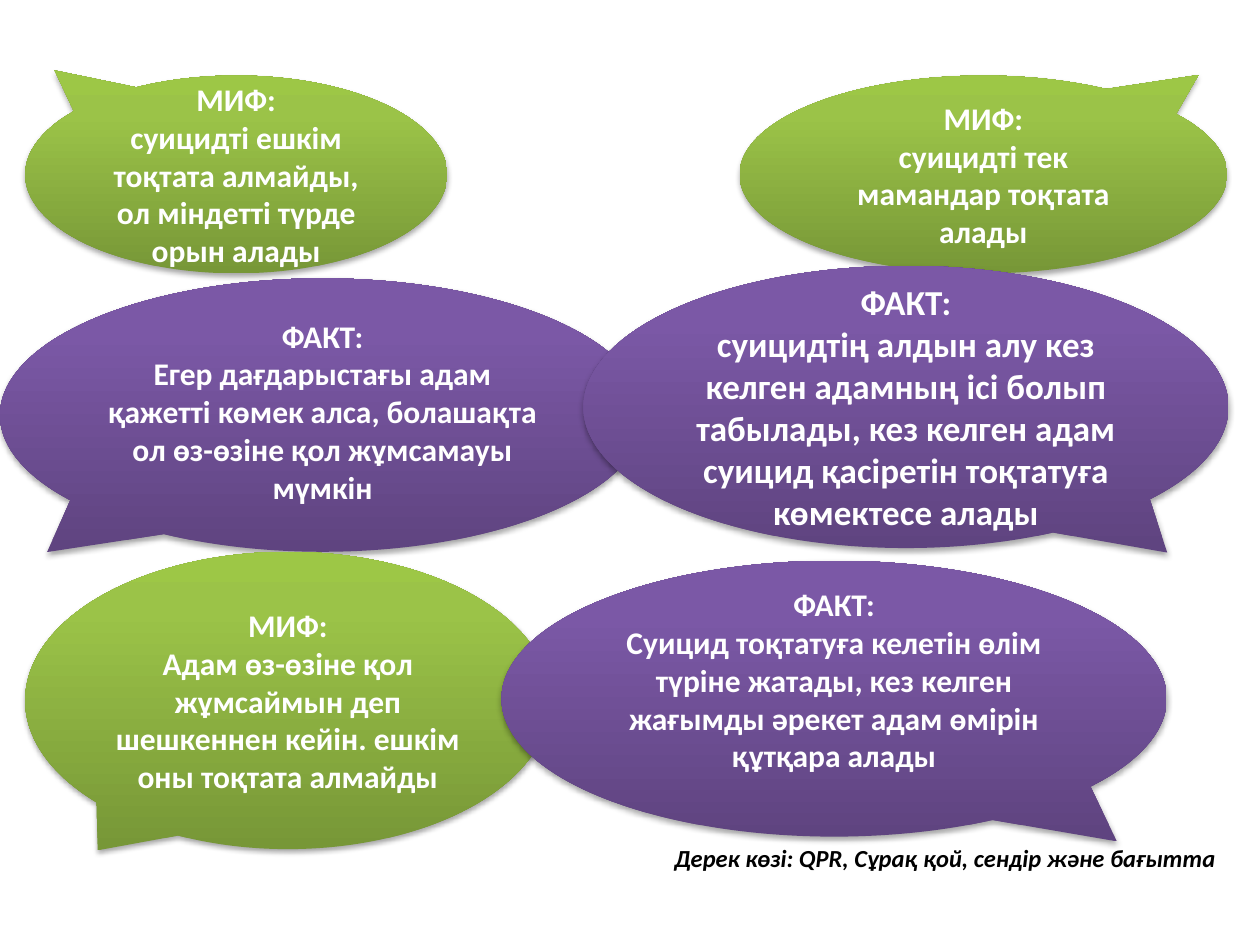
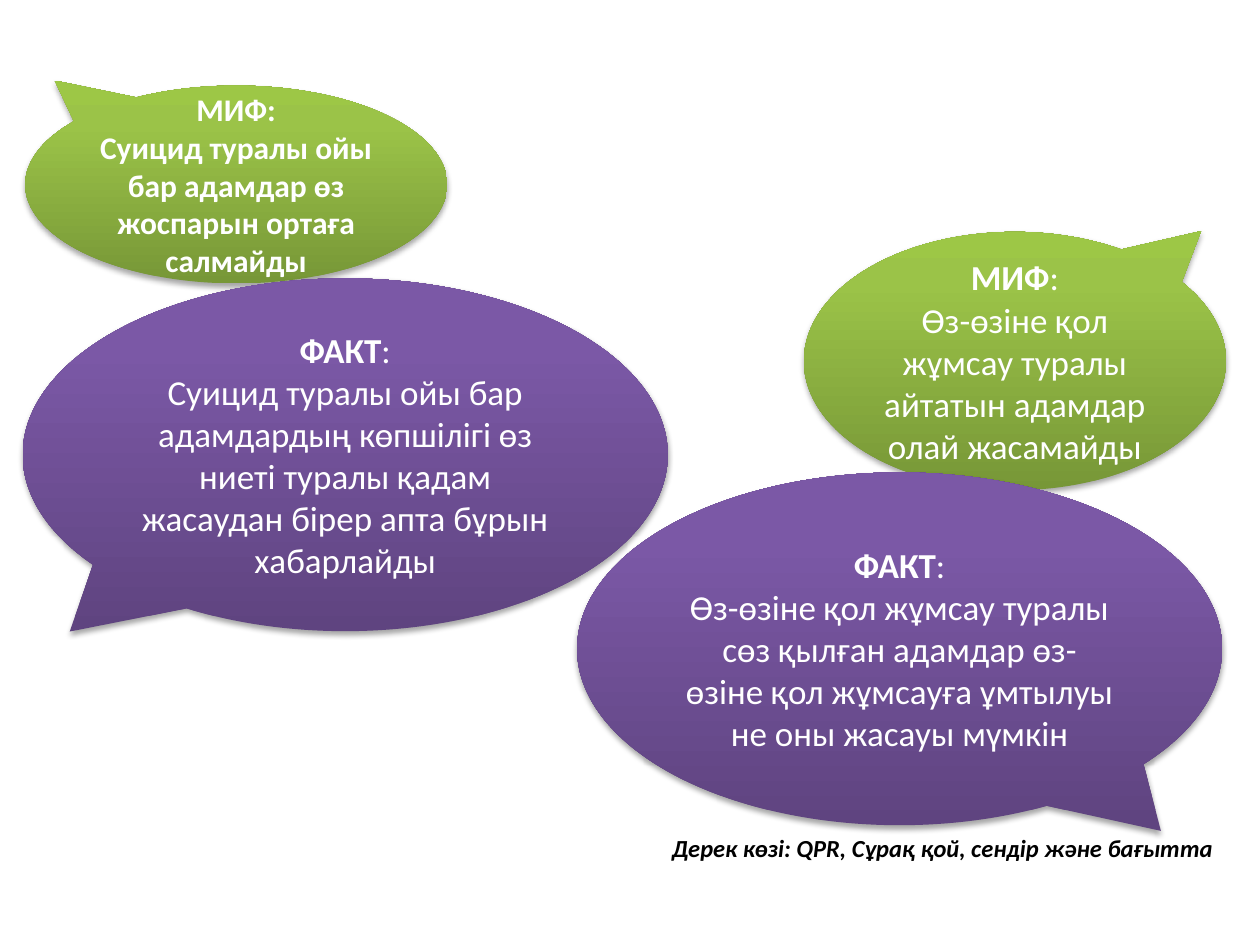
import copy

import pptx
import pptx.dml.color
import pptx.enum.shapes
import pptx.enum.text
import pptx.oxml
import pptx.oxml.ns
import pptx.util
from pptx.util import Inches

FONT = "Calibri"
WHITE = "FFFFFF"
BLACK = "000000"
MYTH = {"label": "МИФ", "gradient": [(0, "779737"), (0.8, "9BC348"), (1, "9DC746")]}
FACT = {"label": "ФАКТ", "gradient": [(0, "5F4480"), (0.8, "7B58A6"), (1, "7C57A8")]}

TAIL_TOP_LEFT = (-0.43, -0.526)
TAIL_TOP_RIGHT = (0.441, -0.503)
TAIL_BOTTOM_LEFT = (-0.427, 0.501)
TAIL_BOTTOM_RIGHT = (0.405, 0.516)

SOURCE = "Дерек көзі: QPR, Сұрақ қой, сендір және бағытта"
SHADOW = (
    '<a:outerShdw %s blurRad="40000" dist="23000" dir="5400000" rotWithShape="0">'
    '<a:srgbClr val="000000"><a:alpha val="35000"/></a:srgbClr></a:outerShdw>'
    % pptx.oxml.ns.nsdecls("a")
)


def color(value):
    return pptx.dml.color.RGBColor.from_string(value)


class Deck:
    def __init__(self):
        self.presentation = pptx.Presentation()
        self.presentation.slide_width = Inches(10)
        self.presentation.slide_height = Inches(7.5)
        self.slide = None

    def add_slide(self):
        self.slide = self.presentation.slides.add_slide(self.presentation.slide_layouts[6])

    def add_run(self, paragraph, text, size, text_color, **formats):
        run = paragraph.add_run()
        run.text = text
        formats = {"name": FONT, "size": pptx.util.Pt(size), **formats}
        for attribute, value in formats.items():
            setattr(run.font, attribute, value)
        run.font.color.rgb = color(text_color)

    def fill_gradient(self, shape, stops):
        shape.fill.gradient()
        shape.fill.gradient_angle = 90
        stop_list = shape._element.spPr.find(".//" + pptx.oxml.ns.qn("a:gsLst"))
        stop_list.append(copy.deepcopy(stop_list[0]))
        for stop, (position, value) in zip(shape.fill.gradient_stops, stops):
            stop.position = position
            stop.color.rgb = color(value)

    def add_bubble(self, kind, box, tail, text, size=18, bold=True, anchor="MIDDLE", bottom=0.05):
        shape = self.slide.shapes.add_shape(
            pptx.enum.shapes.MSO_SHAPE.OVAL_CALLOUT, *map(Inches, box))
        shape.adjustments[0], shape.adjustments[1] = tail
        self.fill_gradient(shape, kind["gradient"])
        shape.line.fill.background()
        shape.shadow.inherit = False
        effects = shape._element.spPr.find(pptx.oxml.ns.qn("a:effectLst"))
        effects.append(pptx.oxml.parse_xml(SHADOW))

        frame = shape.text_frame
        frame.word_wrap = True
        frame.vertical_anchor = getattr(pptx.enum.text.MSO_ANCHOR, anchor)
        frame.margin_bottom = Inches(bottom)
        heading, body = frame.paragraphs[0], frame.add_paragraph()
        self.add_run(heading, kind["label"], size, WHITE, bold=True)
        self.add_run(heading, ":", size, WHITE, bold=bold)
        self.add_run(body, text, size, WHITE, bold=bold)
        for paragraph in frame.paragraphs:
            paragraph.alignment = pptx.enum.text.PP_ALIGN.CENTER

    def add_source(self, left, top):
        box = self.slide.shapes.add_textbox(*map(Inches, (left, top, 9.45, 0.34)))
        frame = box.text_frame
        frame.word_wrap = True
        frame.auto_size = pptx.enum.text.MSO_AUTO_SIZE.SHAPE_TO_FIT_TEXT
        paragraph = frame.paragraphs[0]
        paragraph.alignment = pptx.enum.text.PP_ALIGN.RIGHT
        self.add_run(paragraph, SOURCE, 14, BLACK, bold=True, italic=True)


def main():
    deck = Deck()

    deck.add_slide()
    deck.add_bubble(MYTH, (0.2, 0.6, 3.35, 1.57), TAIL_TOP_LEFT,
                    "суицидті ешкім тоқтата алмайды, ол міндетті түрде орын алады")
    deck.add_bubble(FACT, (0, 2.21, 5.12, 2.17), TAIL_BOTTOM_LEFT,
                    "Егер дағдарыстағы адам қажетті көмек алса, болашақта "
                    "ол өз-өзіне қол жұмсамауы мүмкін", anchor="BOTTOM")
    deck.add_bubble(MYTH, (5.87, 0.6, 3.87, 1.57), TAIL_TOP_RIGHT,
                    "суицидті тек мамандар тоқтата алады")
    deck.add_bubble(FACT, (4.63, 2.11, 5.12, 2.24), TAIL_BOTTOM_RIGHT,
                    "суицидтің алдын алу кез келген адамның ісі болып табылады, "
                    "кез келген адам суицид қасіретін тоқтатуға көмектесе алады", size=20)
    deck.add_source(0.3, 6.64)
    deck.add_bubble(MYTH, (0.2, 4.38, 4.17, 2.36), (-0.362, 0.504),
                    "Адам өз-өзіне қол жұмсаймын деп шешкеннен кейін. "
                    "ешкім оны тоқтата алмайды")
    deck.add_bubble(FACT, (3.98, 4.45, 5.28, 2.19), (0.425, 0.517),
                    "Суицид тоқтатуға келетін өлім түріне жатады, "
                    "кез келген жағымды әрекет адам өмірін құтқара алады", bottom=0.35)

    deck.add_slide()
    deck.add_bubble(MYTH, (0.2, 0.68, 3.35, 1.57), TAIL_TOP_LEFT,
                    "Суицид туралы ойы бар адамдар өз жоспарын ортаға салмайды")
    deck.add_bubble(FACT, (0.18, 2.21, 5.12, 2.8), TAIL_BOTTOM_LEFT,
                    "Суицид туралы ойы бар адамдардың көпшілігі өз ниеті туралы "
                    "қадам жасаудан бірер апта бұрын хабарлайды", size=20, bold=False)
    deck.add_bubble(MYTH, (6.38, 1.84, 3.35, 2.05), TAIL_TOP_RIGHT,
                    "Өз-өзіне қол жұмсау туралы айтатын адамдар олай жасамайды",
                    size=20, bold=False)
    deck.add_bubble(FACT, (4.58, 3.75, 5.12, 2.8), TAIL_BOTTOM_RIGHT,
                    "Өз-өзіне қол жұмсау туралы сөз қылған адамдар өз-өзіне қол "
                    "жұмсауға ұмтылуы не оны жасауы мүмкін", size=20, bold=False)
    deck.add_source(0.28, 6.56)

    deck.presentation.save("out.pptx")


if __name__ == "__main__":
    main()
